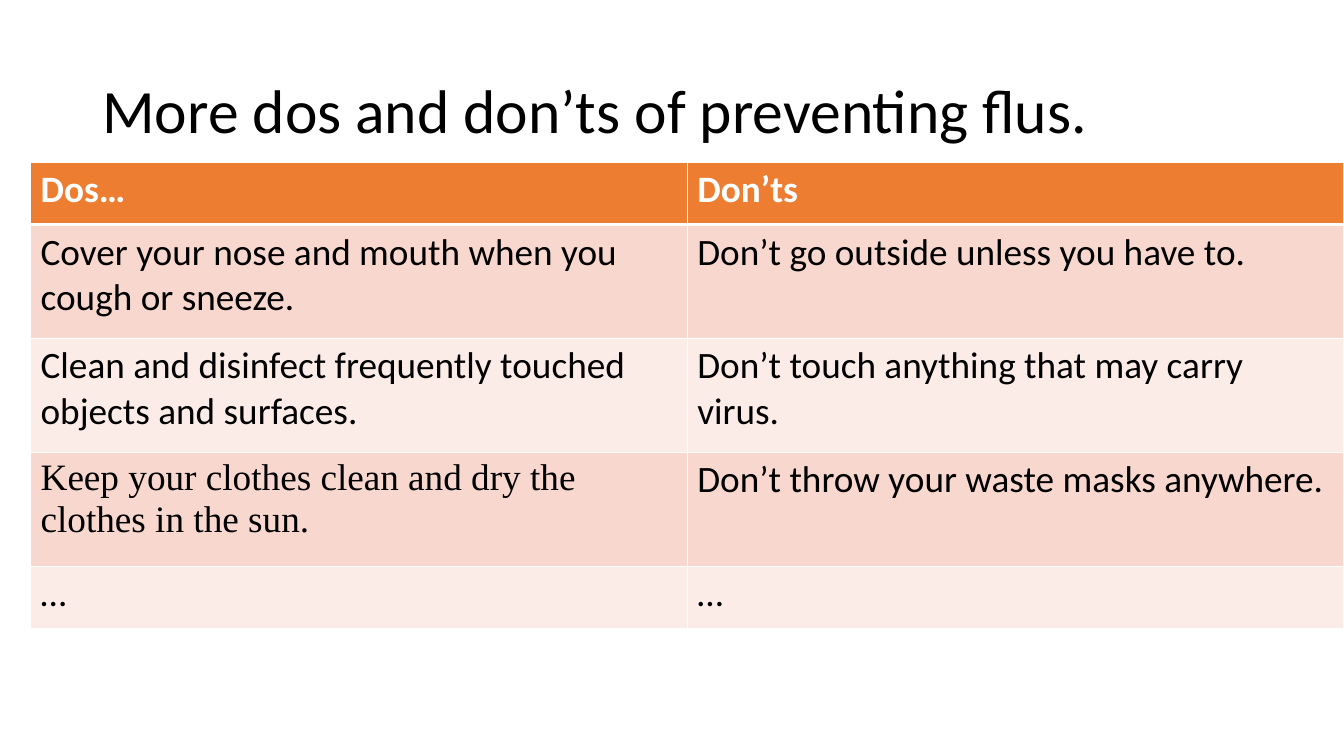
import pptx
import pptx.dml.color
import pptx.enum.text
import pptx.oxml
import pptx.oxml.ns
import pptx.util
from pptx.util import Cm

RGBColor = pptx.dml.color.RGBColor
BLACK = RGBColor(0, 0, 0)
WHITE = RGBColor(0xFF, 0xFF, 0xFF)
ORANGE = RGBColor(0xED, 0x7D, 0x31)
ROSE = RGBColor(0xF8, 0xD7, 0xCE)
PALE = RGBColor(0xFC, 0xEC, 0xE8)

TIPS = [
    ("Dos…", "Don’ts"),
    ("Cover your nose and mouth when you cough or sneeze.",
     "Don’t go outside unless you have to."),
    ("Clean and disinfect frequently touched objects and surfaces.",
     "Don’t touch anything that may carry virus."),
    ("Keep your clothes clean and dry the clothes in the sun.",
     "Don’t throw your waste masks anywhere."),
    ("…", "…"),
]
SHORT, TALL = Cm(1.57), Cm(2.87)
HEIGHTS = [SHORT, TALL, TALL, TALL, SHORT]


def write(frame, text, size=26.6, font="Calibri", color=BLACK, bold=False, line=None):
    """Put one formatted paragraph into a text frame."""
    par = frame.paragraphs[0]
    par.line_spacing = line
    run = par.add_run()
    run.text = text
    run.font.size = pptx.util.Pt(size)
    run.font.name = font
    run.font.bold = bold
    run.font.color.rgb = color


def edge(cell, top, low):
    """Give a cell white borders, with top and low widths in points."""
    props = cell._tc.get_or_add_tcPr()
    for spot, (side, width) in enumerate(zip("LRTB", (1, 1, top, low))):
        props.insert(spot, pptx.oxml.parse_xml(
            f'<a:ln{side} {pptx.oxml.ns.nsdecls("a")} w="{pptx.util.Pt(width)}">'
            f'<a:solidFill><a:srgbClr val="{WHITE}"/></a:solidFill></a:ln{side}>'))


def title(slide, left, top, width, height):
    """Draw the heading in the given box."""
    frame = slide.shapes.add_textbox(left, top, width, height).text_frame
    frame.word_wrap = True
    frame.vertical_anchor = pptx.enum.text.MSO_ANCHOR.MIDDLE
    write(frame, "More dos and don’ts of preventing flus.", size=44, line=0.9)


def advice(slide, left, top, width, height):
    """Draw the table of tips in the given box."""
    table = slide.shapes.add_table(len(TIPS), 2, left, top, width, height).table
    for col in table.columns:
        col.width = width // 2
    for row, tips in enumerate(TIPS):
        table.rows[row].height = HEIGHTS[row]
        head = row == 0
        for col, tip in enumerate(tips):
            cell = table.cell(row, col)
            cell.fill.solid()
            cell.fill.fore_color.rgb = ORANGE if head else ROSE if row % 2 else PALE
            edge(cell, top=3 if row == 1 else 1, low=3 if head else 1)
            serif = tip.startswith("Keep")
            write(cell.text_frame, tip, bold=head, color=WHITE if head else BLACK,
                  font="Times New Roman" if serif else "Calibri")


def main():
    """Build and save the slide."""
    deck = pptx.Presentation()
    deck.slide_width, deck.slide_height = Cm(33.87), Cm(19.05)
    slide = deck.slides.add_slide(deck.slide_layouts[6])
    title(slide, Cm(2.33), Cm(1.01), Cm(29.21), Cm(3.68))
    advice(slide, Cm(0.77), Cm(4.09), Cm(33.1), sum(HEIGHTS))
    deck.save("out.pptx")


if __name__ == "__main__":
    main()
